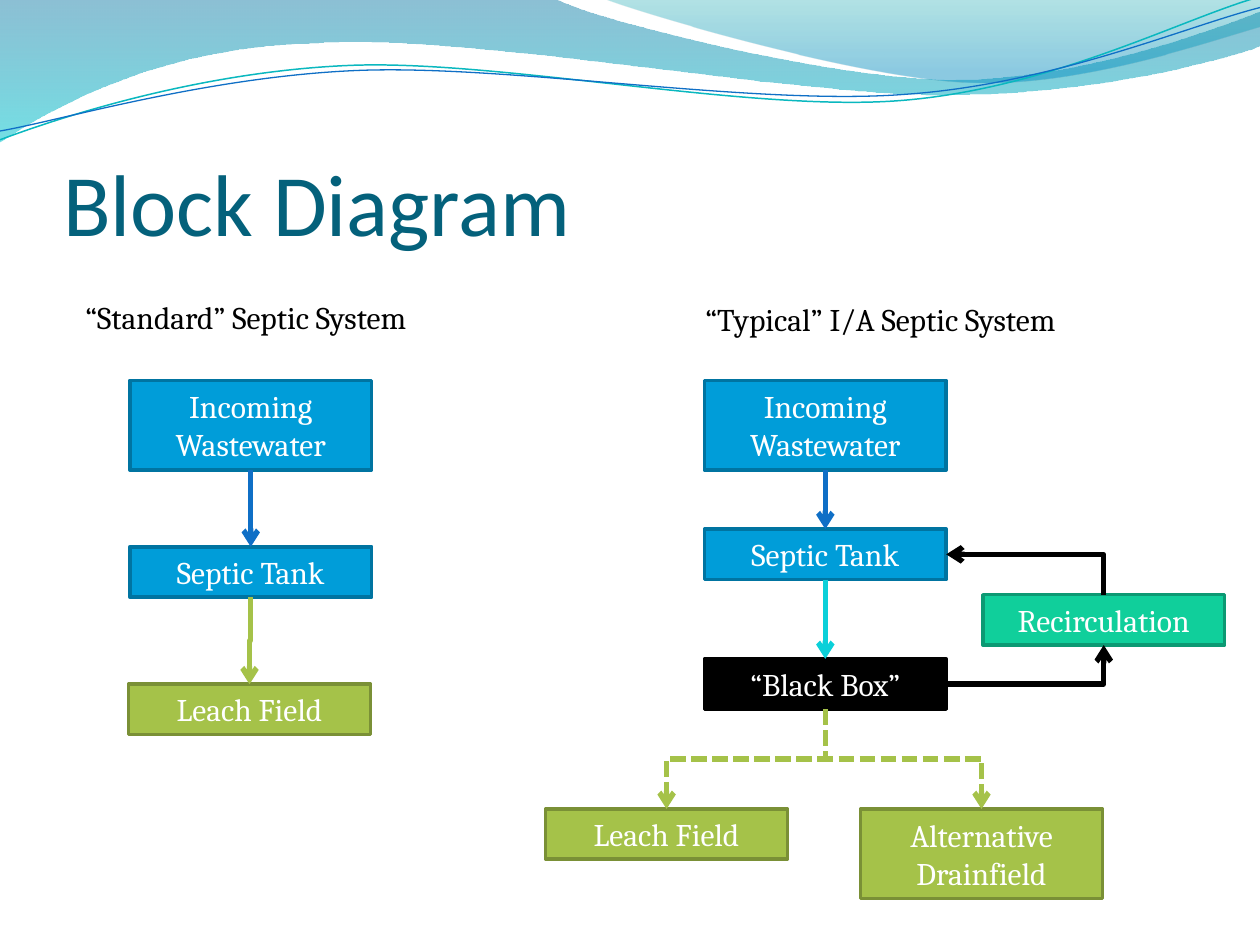
from dataclasses import dataclass

from lxml import etree
from pptx import Presentation
from pptx.dml.color import RGBColor
from pptx.enum import dml, shapes, text
from pptx.oxml.ns import qn
from pptx.util import Inches, Pt


@dataclass(frozen=True)
class Theme:
    title: str = "04617B"
    ink: str = "000000"
    paper: str = "FFFFFF"
    blue: str = "009DD9"
    blue_edge: str = "0074A1"
    green: str = "A5C249"
    green_edge: str = "7A9036"
    mint: str = "10CF9B"
    mint_edge: str = "0C9973"
    flow: str = "0F6FC6"
    treated: str = "0BD0D9"
    ripple: str = "0AB8BF"
    heading_font: str = "Calibri"
    body_font: str = "Cambria"
    title_size: int = 50
    body_size: int = 18


@dataclass(frozen=True)
class Stop:
    position: float
    color: str
    opacity: int


@dataclass(frozen=True)
class Wave:
    start: tuple
    segments: tuple
    stops: tuple = ()
    line: str = ""
    width: float = 0


@dataclass(frozen=True)
class Block:
    key: str
    label: str
    left: float
    top: float
    fill: str
    edge: str
    height: float = 0.4


@dataclass(frozen=True)
class Bend:
    preset: str
    rotation: int = 0
    flip: str = ""


DOWN = Bend("bentConnector3", 90)
DOWN_RIGHT = Bend("bentConnector3", 270, "flipH")
RIGHT_UP = Bend("bentConnector2", 0, "flipV")
UP_LEFT = Bend("bentConnector2", 270, "flipV")


@dataclass(frozen=True)
class Link:
    start: str
    end: str
    color: str
    start_side: int = 2
    end_side: int = 0
    bend: Bend = DOWN
    dashed: bool = False


THEME = Theme()
BLOCK_WIDTH = 1.92
TALL = 0.71
LEFT, RIGHT = 1.03, 5.59

WAVES = (
    Wave((0, 0), ((4.4, -0.01), (4.76, 0.17, 6.64, 0.63, 7.58, 0.63),
                  (8.53, 0.63, 9.58, 0.26, 10, 0.09), (10.01, 0.36),
                  (9.83, 0.44, 8.7, 0.76, 7.46, 0.75),
                  (6.22, 0.75, 3.82, 0.28, 2.57, 0.34),
                  (1.29, 0.36, 0.46, 0.83, -0.01, 1.13)),
         stops=(Stop(0, "0074A1", 45), Stop(1, "00C6CF", 55))),
    Wave((4.79, -0.01), ((5.09, 0.11, 6.82, 0.62, 7.69, 0.65),
                         (8.56, 0.69, 9.61, 0.32, 10, 0.21), (10, 0)),
         stops=(Stop(0, "00A1A9", 30), Stop(0.8, "008BBF", 45))),
    Wave((0, 1.11), ((0.48, 0.93, 1.58, 0.57, 2.77, 0.52),
                     (3.95, 0.47, 5.93, 0.89, 7.13, 0.8),
                     (8.33, 0.71, 9.38, 0.15, 9.98, -0.02)),
         line=THEME.ripple, width=0.85),
    Wave((0, 1.04), ((0.47, 0.96, 1.64, 0.61, 2.83, 0.56),
                     (4.03, 0.51, 5.97, 0.84, 7.17, 0.75),
                     (8.36, 0.67, 9.41, 0.21, 10, 0.06)),
         line=THEME.flow, width=0.75),
)

BLOCKS = (
    Block("standard inflow", "Incoming Wastewater", LEFT, 3.02, THEME.blue, THEME.blue_edge, TALL),
    Block("standard tank", "Septic Tank", LEFT, 4.34, THEME.blue, THEME.blue_edge),
    Block("standard field", "Leach Field", 1.02, 5.43, THEME.green, THEME.green_edge),
    Block("inflow", "Incoming Wastewater", RIGHT, 3.02, THEME.blue, THEME.blue_edge, TALL),
    Block("tank", "Septic Tank", RIGHT, 4.2, THEME.blue, THEME.blue_edge),
    Block("field", "Leach Field", 4.33, 6.42, THEME.green, THEME.green_edge),
    Block("black box", "“Black Box”", RIGHT, 5.23, THEME.ink, THEME.ink),
    Block("drainfield", "Alternative Drainfield", 6.83, 6.42, THEME.green, THEME.green_edge, TALL),
    Block("recirculation", "Recirculation", 7.8, 4.72, THEME.mint, THEME.mint_edge),
)

LINKS = (
    Link("black box", "recirculation", THEME.ink, 3, 2, RIGHT_UP),
    Link("recirculation", "tank", THEME.ink, 0, 3, UP_LEFT),
    Link("tank", "black box", THEME.treated),
    Link("black box", "field", THEME.green, dashed=True),
    Link("black box", "drainfield", THEME.green, bend=DOWN_RIGHT, dashed=True),
    Link("inflow", "tank", THEME.flow),
    Link("standard inflow", "standard tank", THEME.flow),
    Link("standard tank", "standard field", THEME.green),
)

CAPTIONS = (
    ("“Standard” Septic System", 0.58, 2.32, 2.93),
    ("“Typical” I/A Septic System", 5.5, 2.33, 3.14),
)


def rgb(color: str) -> RGBColor:
    return RGBColor.from_string(color)


def style_text(frame, content: str, color: str, font: str, size: int, align) -> None:
    frame.text = content
    para = frame.paragraphs[0]
    para.alignment = align
    para.font.name = font
    para.font.size = Pt(size)
    para.font.color.rgb = rgb(color)


def curve_outline(shape, segments: tuple) -> None:
    nodes = iter(list(shape._element.spPr.iter(qn("a:lnTo"))))
    for segment in segments:
        first = next(nodes)
        if len(segment) == 6:
            first.tag
            curve = etree.Element(qn("a:cubicBezTo"))
            first.addprevious(curve)
            for node in (first, next(nodes), next(nodes)):
                curve.append(node[0])
                node.getparent().remove(node)


def draw_wave(page, wave: Wave) -> None:
    points = [(Inches(segment[i]), Inches(segment[i + 1]))
              for segment in wave.segments for i in range(0, len(segment), 2)]
    builder = page.shapes.build_freeform(*(Inches(n) for n in wave.start))
    builder.add_line_segments(points, close=bool(wave.stops))
    shape = builder.convert_to_shape()
    curve_outline(shape, wave.segments)
    shape.shadow.inherit = False
    if not wave.stops:
        shape.fill.background()
        shape.line.color.rgb = rgb(wave.line)
        shape.line.width = Pt(wave.width)
        return
    shape.line.fill.background()
    shape.fill.gradient()
    shape.fill.gradient_angle = 270
    for target, stop in zip(shape.fill.gradient_stops, wave.stops):
        target.position = stop.position
        target.color.rgb = rgb(stop.color)
    for node, stop in zip(shape._element.spPr.iter(qn("a:srgbClr")), wave.stops):
        etree.SubElement(node, qn("a:alpha"), val=str(stop.opacity * 1000))


def draw_block(page, block: Block):
    box = page.shapes.add_shape(shapes.MSO_SHAPE.RECTANGLE, Inches(block.left), Inches(block.top),
                                Inches(BLOCK_WIDTH), Inches(block.height))
    box.shadow.inherit = False
    box.fill.solid()
    box.fill.fore_color.rgb = rgb(block.fill)
    box.line.color.rgb = rgb(block.edge)
    box.line.width = Pt(2)
    box.text_frame.word_wrap = True
    box.text_frame.auto_size = text.MSO_AUTO_SIZE.SHAPE_TO_FIT_TEXT
    style_text(box.text_frame, block.label, THEME.paper, THEME.body_font, THEME.body_size,
               text.PP_ALIGN.CENTER)
    return box


def bend_connector(connector, bend: Bend) -> None:
    left, top, width, height = connector.left, connector.top, connector.width, connector.height
    properties = connector._element.spPr
    properties.find(qn("a:prstGeom")).set("prst", bend.preset)
    frame = properties.find(qn("a:xfrm"))
    frame.attrib.clear()
    if bend.flip:
        frame.set(bend.flip, "1")
    if bend.rotation:
        frame.set("rot", str(bend.rotation * 60000))
        connector.left, connector.top = left + (width - height) // 2, top + (height - width) // 2
        connector.width, connector.height = height, width


def draw_link(page, link: Link, boxes: dict) -> None:
    connector = page.shapes.add_connector(shapes.MSO_CONNECTOR.ELBOW, 0, 0, 0, 0)
    connector.begin_connect(boxes[link.start], link.start_side)
    connector.end_connect(boxes[link.end], link.end_side)
    bend_connector(connector, link.bend)
    connector.line.color.rgb = rgb(link.color)
    connector.line.width = Pt(3)
    if link.dashed:
        connector.line.dash_style = dml.MSO_LINE.SQUARE_DOT
    properties = connector._element.spPr
    etree.SubElement(properties.find(qn("a:ln")), qn("a:tailEnd"), type="arrow")
    etree.SubElement(properties, qn("a:effectLst"))


def draw_title(page) -> None:
    title = page.shapes.title
    title.left, title.top, title.width, title.height = (Inches(n) for n in (0.5, 0.77, 9.08, 1.25))
    frame = title.text_frame
    frame.margin_left = frame.margin_right = frame.margin_bottom = 0
    frame.margin_top = Inches(0.05)
    frame.vertical_anchor = text.MSO_ANCHOR.BOTTOM
    frame.auto_size = text.MSO_AUTO_SIZE.NONE
    style_text(frame, "Block Diagram", THEME.title, THEME.heading_font, THEME.title_size,
               text.PP_ALIGN.LEFT)


def draw_caption(page, content: str, left: float, top: float, width: float) -> None:
    box = page.shapes.add_textbox(Inches(left), Inches(top), Inches(width), Inches(0.4))
    box.text_frame.word_wrap = False
    box.text_frame.auto_size = text.MSO_AUTO_SIZE.SHAPE_TO_FIT_TEXT
    style_text(box.text_frame, content, THEME.ink, THEME.body_font, THEME.body_size, text.PP_ALIGN.LEFT)


def main() -> None:
    deck = Presentation()
    deck.slide_width, deck.slide_height = Inches(10), Inches(7.5)
    page = deck.slides.add_slide(deck.slide_layouts[5])
    for wave in WAVES:
        draw_wave(page, wave)
    draw_title(page)
    boxes = {block.key: draw_block(page, block) for block in BLOCKS}
    for link in LINKS:
        draw_link(page, link, boxes)
    for caption in CAPTIONS:
        draw_caption(page, *caption)
    deck.save("out.pptx")


if __name__ == "__main__":
    main()
